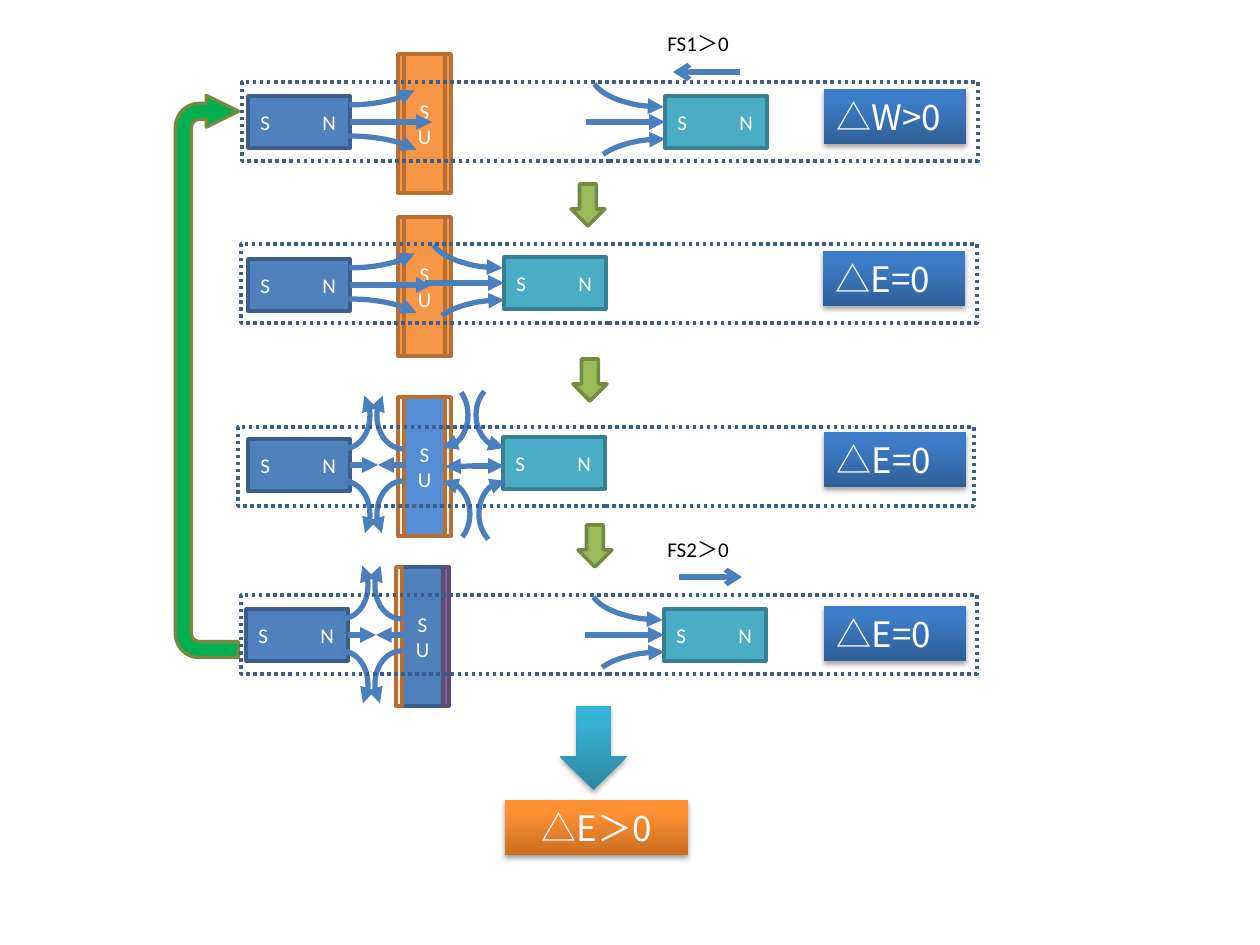
"""Build a slide of a four-step magnet cycle with its energy balance."""
import copy
from dataclasses import dataclass
from typing import Optional

import pptx
import pptx.dml.color
import pptx.enum.dml
import pptx.enum.shapes
import pptx.enum.text
import pptx.oxml.ns
import pptx.oxml.xmlchemy
import pptx.util
from lxml import etree

SCALE = 914400 / 126
ARC_HEIGHT = 66
ARC_START = 161.33
MAGNET_W, MAGNET_H = 102, 52
PLATE_W, PLATE_H, COAT_W = 41, 139, 6
MAGNET_TEXT = "S\tN"
MST = pptx.enum.shapes.MSO_SHAPE
ALIGN = pptx.enum.text.PP_ALIGN
ANCHOR = pptx.enum.text.MSO_ANCHOR
qn = pptx.oxml.ns.qn

COLORS = {
    "field": "4B7EBC", "blue": "4F81BD", "navy": "3A5F8C", "teal": "4BACC6",
    "teal_edge": "377F92", "orange": "F79646", "rust": "B76F34", "sky": "558ED5",
    "pale": "EBF1DE", "purple": "8064A2", "purple_edge": "5F4A78", "green": "00B050",
    "olive": "9BBB59", "olive_edge": "738A42", "white": "FFFFFF", "black": "000000",
}
GRADIENTS = {
    "blue": ("2F5F99", "3D7CC7", "3A7CCB"),
    "orange": ("CC6E20", "FF9034", "FF9136"),
    "teal": ("2A88A2", "37B1D2", "34B4D6"),
}


@dataclass(frozen=True)
class Arc:
    """A curved field line, placed from the magnet's corner."""
    dx: int
    dy: int
    w: int
    end: float
    flip: str
    arrow: str


@dataclass(frozen=True)
class Ray:
    """A straight field line; join names the magnet or plate it starts on."""
    x1: int
    x2: int
    dy: int
    arrow: str
    join: str = ""


@dataclass(frozen=True)
class Plate:
    """Fill and line colours of the core and its two coats."""
    core: tuple[str, str]
    right: tuple[str, str]
    left: tuple[str, str]


@dataclass(frozen=True)
class Step:
    """One row of the cycle."""
    y: int
    left: int
    right: tuple[int, int]
    plate: Plate
    left_field: list
    right_field: list
    frame: tuple[int, int]
    label: tuple[int, int]
    text: str


PASS_OUT = [Arc(18, 40, 166, 206.47, "", "tail"), Ray(102, 184, 26, "tail", "magnet"),
            Arc(23, -57, 157, 206.47, "v", "tail")]
PASS_IN = [Arc(-73, 43, 145, 206.47, "h", "head"), Ray(0, -79, 26, "head", "magnet"),
           Arc(-74, -55, 144, 210.93, "hv", "head")]
REPEL_LEFT = [Arc(69, 42, 53, 25.09, "", "tail"), Ray(102, 130, 26, "tail", "magnet"),
              Arc(69, -56, 53, 26.52, "v", "tail"), Arc(129, 42, 53, 25.09, "h", "tail"),
              Ray(158, 130, 26, "tail"), Arc(129, -56, 53, 26.52, "hv", "tail")]
REPEL_RIGHT = [Arc(-24, 44, 52, 34.19, "h", "head"), Ray(1, -31, 29, "head"),
               Arc(-27, -55, 55, 30.69, "hv", "head"), Arc(-86, 44, 53, 30.35, "", "head"),
               Ray(-59, -27, 29, "head", "plate"), Arc(-85, -55, 50, 30.69, "v", "head")]

ORANGE = ("orange", "rust")
PALE = ("pale", "rust")
OPEN = Plate(ORANGE, ORANGE, ORANGE)
STEPS = [
    Step(96, 248, (665, 96), OPEN, PASS_OUT, PASS_IN, (242, 82), (824, 89), "△W>0"),
    Step(259, 248, (504, 257), OPEN, PASS_OUT, PASS_IN, (241, 244), (823, 251), "△E=0"),
    Step(439, 248, (503, 437), Plate(("sky", "rust"), PALE, PALE),
         REPEL_LEFT, REPEL_RIGHT, (238, 427), (824, 432), "△E=0"),
    Step(609, 246, (664, 609), Plate(("blue", "navy"), ("purple", "purple_edge"), PALE),
         REPEL_LEFT, PASS_IN, (241, 595), (824, 606), "△E=0"),
]


def px(n: float) -> pptx.util.Emu:
    """Turn px into EMU."""
    return pptx.util.Emu(round(n * SCALE))


def rgb(name: str) -> pptx.dml.color.RGBColor:
    """Look up a colour by name or take a hex string."""
    return pptx.dml.color.RGBColor.from_string(COLORS.get(name, name))


def add_text(sp, text: str, *, size: int = 12, font: str = "Calibri", color: str = "white",
             align=ALIGN.LEFT, anchor=ANCHOR.TOP, tab: int = 0) -> None:
    """Write one formatted paragraph into a shape."""
    tf = sp.text_frame
    tf.word_wrap = True
    tf.vertical_anchor = anchor
    p = tf.paragraphs[0]
    p.alignment = align
    if tab:
        tabs = etree.SubElement(p._p.get_or_add_pPr(), qn("a:tabLst"))
        etree.SubElement(tabs, qn("a:tab"), pos=str(px(tab)), algn="l")
    r = p.add_run()
    r.text = text
    r.font.size = pptx.util.Pt(size)
    r.font.name = font
    r.font.color.rgb = rgb(color)
    r.font._element.find(qn("a:latin")).addnext(
        etree.Element(qn("a:ea"), typeface="Noto Sans CJK SC"))


def add_shape(s, kind, x: int, y: int, w: int, h: int, fill: Optional[str] = None,
              line: Optional[str] = None, width: int = 2):
    """Add a flat preset shape."""
    sp = s.shapes.add_shape(kind, px(x), px(y), px(w), px(h))
    sp.shadow.inherit = False
    if fill:
        sp.fill.solid()
        sp.fill.fore_color.rgb = rgb(fill)
    else:
        sp.fill.background()
    if line:
        sp.line.color.rgb = rgb(line)
        sp.line.width = pptx.util.Pt(width)
    else:
        sp.line.fill.background()
    return sp


def add_glossy(s, kind, x: int, y: int, w: int, h: int, gradient: str):
    """Add a shape with a vertical gradient and a soft shadow."""
    sp = add_shape(s, kind, x, y, w, h)
    sp.fill.gradient()
    sp.fill.gradient_angle = 90
    last = sp.element.spPr.findall(".//" + qn("a:gs"))[-1]
    last.addnext(copy.deepcopy(last))
    for stop, position, color in zip(sp.fill.gradient_stops, (0, 0.8, 1), GRADIENTS[gradient]):
        stop.position = position
        stop.color.rgb = rgb(color)
    shadow = etree.SubElement(sp.element.spPr.find(qn("a:effectLst")), qn("a:outerShdw"),
                              blurRad="39400", dist="22900", dir="5400000", rotWithShape="0")
    tint = etree.SubElement(shadow, qn("a:srgbClr"), val=COLORS["black"])
    etree.SubElement(tint, qn("a:alpha"), val="35000")
    return sp


def add_arrowhead(sp, end: str, kind: str = "triangle") -> None:
    """Put an arrowhead on the head or tail end of a line."""
    etree.SubElement(sp.element.spPr.find(qn("a:ln")), qn(f"a:{end}End"), type=kind)


def add_line(s, x1: int, x2: int, y: int, end: str, kind: str = "triangle"):
    """Add a level field-coloured arrow."""
    cx = s.shapes.add_connector(pptx.enum.shapes.MSO_CONNECTOR.STRAIGHT,
                                px(x1), px(y), px(x2), px(y))
    cx.line.color.rgb = rgb("field")
    cx.line.width = pptx.util.Pt(3)
    add_arrowhead(cx, end, kind)
    etree.SubElement(cx.element.spPr, qn("a:effectLst"))
    return cx


def add_field(s, parts: list, x: int, y: int, magnet, plate, side: int) -> None:
    """Draw the field lines round a magnet, joined on the given side."""
    for part in parts:
        if isinstance(part, Ray):
            cx = add_line(s, x + part.x1, x + part.x2, y + part.dy, part.arrow)
            if part.join == "magnet":
                cx.begin_connect(magnet, side)
            elif part.join == "plate":
                cx.begin_connect(plate, 3)
            continue
        sp = add_shape(s, MST.ARC, x + part.dx, y + part.dy, part.w, ARC_HEIGHT,
                       line="field", width=3)
        sp.adjustments[0], sp.adjustments[1] = ARC_START, part.end
        for axis in part.flip:
            sp.element.spPr.xfrm.set("flip" + axis.upper(), "1")
        add_arrowhead(sp, part.arrow)


def add_magnet(s, x: int, y: int, fill: str, line: str):
    """Add a magnet with its two poles."""
    sp = add_shape(s, MST.RECTANGLE, x, y, MAGNET_W, MAGNET_H, fill, line)
    add_text(sp, MAGNET_TEXT, anchor=ANCHOR.MIDDLE, tab=62)
    return sp


def add_plate(s, x: int, y: int, plate: Plate):
    """Add the coated plate and return its core."""
    core = add_shape(s, MST.RECTANGLE, x, y, PLATE_W, PLATE_H, *plate.core)
    add_text(core, "SU", align=ALIGN.CENTER, anchor=ANCHOR.MIDDLE)
    add_shape(s, MST.RECTANGLE, x + PLATE_W, y, COAT_W, PLATE_H, *plate.right)
    add_shape(s, MST.RECTANGLE, x - COAT_W, y, COAT_W, PLATE_H, *plate.left)
    return core


def add_step(s, step: Step) -> None:
    """Draw one row: plate, both magnets and their fields."""
    plate = add_plate(s, step.left + 156, step.y - 42, step.plate)
    right = add_magnet(s, *step.right, "teal", "teal_edge")
    add_field(s, step.right_field, *step.right, right, plate, 1)
    left = add_magnet(s, step.left, step.y, "blue", "navy")
    add_field(s, step.left_field, step.left, step.y, left, plate, 3)


def main() -> None:
    """Build and save the slide."""
    prs = pptx.Presentation()
    prs.slide_width, prs.slide_height = px(1260), px(945)
    s = prs.slides.add_slide(prs.slide_layouts[6])
    for step in STEPS:
        add_step(s, step)

    sp = add_shape(s, MST.U_TURN_ARROW, -74, 345, 562, 63, "green", "olive_edge")
    sp.rotation = 270
    for i, value in enumerate((0.25, 0.25, 0.51, 0.38, 1)):
        sp.adjustments[i] = value

    for step in STEPS:
        sp = add_glossy(s, MST.RECTANGLE, *step.label, 142, 55, "blue")
        add_text(sp, step.text, size=20, font="Noto Sans CJK SC")
        sp = add_shape(s, MST.RECTANGLE, *step.frame, 736, 79, line="navy")
        sp.line.dash_style = pptx.enum.dml.MSO_LINE.ROUND_DOT

    for x, y in ((571, 184), (573, 359), (578, 525)):
        add_shape(s, MST.DOWN_ARROW, x, y, 34, 42, "olive", "olive_edge")

    for text, y, x1, x2, line_y in (("FS1＞0", 24, 740, 673, 72), ("FS2＞0", 530, 679, 742, 577)):
        sp = s.shapes.add_textbox(px(655), px(y), px(106), px(38))
        add_text(sp, text, color="black")
        add_line(s, x1, x2, line_y, "tail", "arrow")

    sp = add_glossy(s, MST.RECTANGLE, 505, 800, 183, 55, "orange")
    add_text(sp, "△E＞0", size=20, font="Noto Sans CJK SC", align=ALIGN.CENTER)
    add_glossy(s, MST.DOWN_ARROW, 560, 706, 67, 84, "teal")
    prs.save("out.pptx")


if __name__ == "__main__":
    main()
